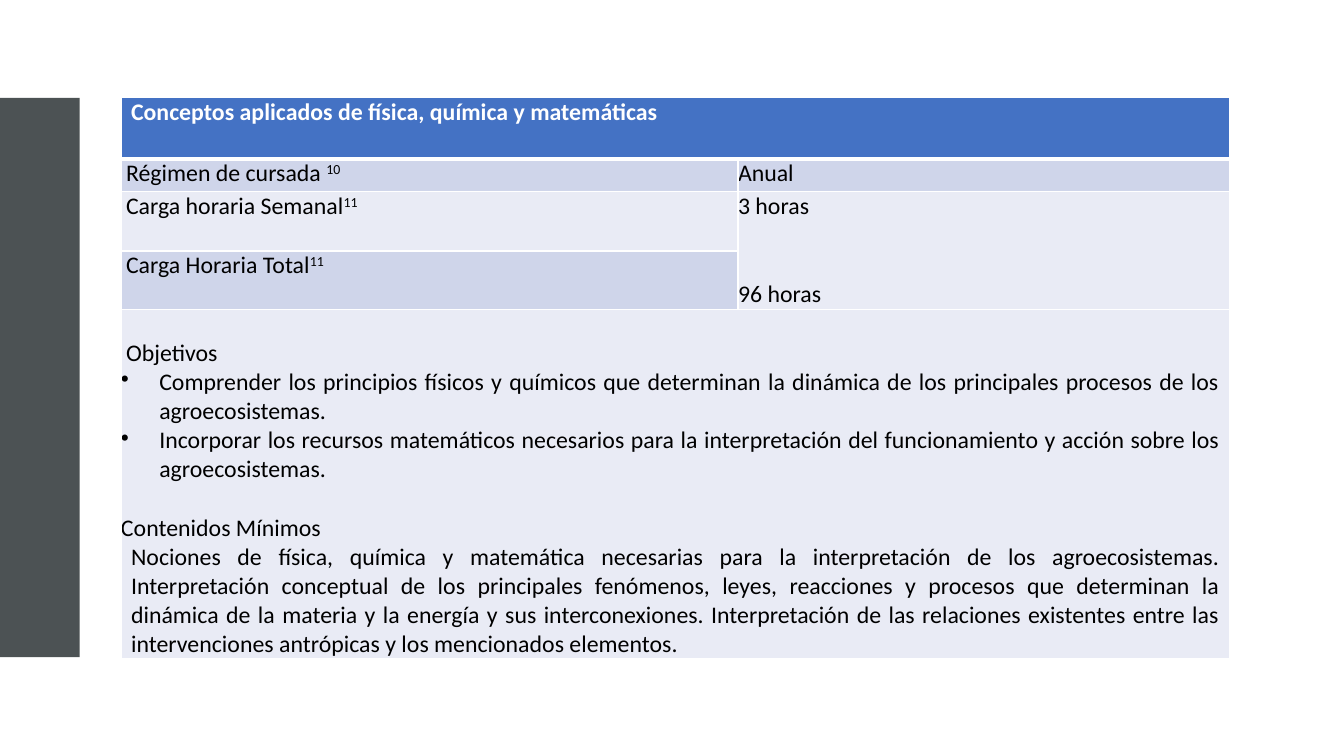
from lxml import etree
from pptx import Presentation
from pptx.dml.color import RGBColor
from pptx.enum.shapes import MSO_SHAPE
from pptx.enum.text import PP_ALIGN
from pptx.oxml.ns import qn
from pptx.util import Inches, Pt

RECT = MSO_SHAPE.RECTANGLE
LEFT = PP_ALIGN.LEFT
JUST = PP_ALIGN.JUSTIFY
HEX = {"bar": "4C5254", "head": "4472C4", "dark": "CFD5EA",
       "pale": "E9EBF5", "white": "FFFFFF", "black": "000000"}
COLS = [6.12, 4.88]
ROWS = [0.61, 0.32, 0.59, 0.58, 3.44]
LINE = 21

GOALS = [
    "Comprender los principios físicos y químicos que determinan la dinámica de los "
    "principales procesos de los agroecosistemas.",
    "Incorporar los recursos matemáticos necesarios para la interpretación del "
    "funcionamiento y acción sobre los agroecosistemas.",
]
TOPICS = (
    "Nociones de física, química y matemática necesarias para la interpretación de los "
    "agroecosistemas. Interpretación conceptual de los principales fenómenos, leyes, "
    "reacciones y procesos que determinan la dinámica de la materia y la energía y sus "
    "interconexiones. Interpretación de las relaciones existentes entre las "
    "intervenciones antrópicas y los mencionados elementos."
)


def color(name):
    return RGBColor.from_string(HEX[name])


def add_bar(slide):
    bar = slide.shapes.add_shape(RECT, 0, Inches(0.97), Inches(0.79), Inches(5.55))
    bar.shadow.inherit = False
    bar.fill.solid()
    bar.fill.fore_color.rgb = color("bar")
    bar.line.fill.background()


def add_edge(cell, side, width):
    props = cell._tc.get_or_add_tcPr()
    edge = etree.SubElement(props, qn("a:ln" + side), w=str(Pt(width)))
    fill = etree.SubElement(edge, qn("a:solidFill"))
    etree.SubElement(fill, qn("a:srgbClr"), val=HEX["white"])


def style_cell(cell, tint, top, base):
    cell.margin_left = cell.margin_right = 0
    cell.margin_top = cell.margin_bottom = 0
    for side, width in (("L", 1), ("R", 1), ("T", top), ("B", base)):
        add_edge(cell, side, width)
    cell.fill.solid()
    cell.fill.fore_color.rgb = color(tint)


def add_grid(slide):
    frame = slide.shapes.add_table(len(ROWS), len(COLS), Inches(1.2), Inches(0.97),
                                   Inches(sum(COLS)), Inches(sum(ROWS)))
    grid = frame.table
    grid.horz_banding = False
    for col, width in zip(grid.columns, COLS):
        col.width = Inches(width)
    for row, height in zip(grid.rows, ROWS):
        row.height = Inches(height)
    tints = [("head", "head"), ("dark", "dark"), ("pale", "pale"),
             ("dark", "pale"), ("pale", "pale")]
    for r, pair in enumerate(tints):
        for c, tint in enumerate(pair):
            style_cell(grid.cell(r, c), tint, 3 if r == 1 else 1, 3 if r == 0 else 1)
    for first, last in (((0, 0), (0, 1)), ((2, 1), (3, 1)), ((4, 0), (4, 1))):
        grid.cell(*first).merge(grid.cell(*last))
    return grid


def write(cell, text, note="", indent=0, gap=0, align=LEFT, ink="black",
          bold=False, bullet=False):
    frame = cell.text_frame
    para = frame.paragraphs[0]
    if para.runs:
        para = frame.add_paragraph()
    para.add_run().text = text
    if note:
        mark = para.add_run()
        mark.text = note
        mark._r.get_or_add_rPr().set("baseline", "30000")
    para.alignment = align
    para.space_before = Pt(gap)
    font = para.font
    font.name, font.size, font.bold = "Calibri", Pt(17), bold
    font.color.rgb = color(ink)
    props = para._p.get_or_add_pPr()
    props.set("marL", str(Inches(indent)))
    props.set("indent", str(Inches(-indent if bullet else 0)))
    if align == JUST:
        props.set("marR", str(Inches(0.1)))
    if bullet:
        dot = etree.Element(qn("a:buChar"), char="•")
        props.find(qn("a:defRPr")).addprevious(dot)


def fill_grid(grid):
    write(grid.cell(0, 0), "Conceptos aplicados de física, química y matemáticas",
          indent=0.1, align=JUST, ink="white", bold=True)
    labels = [("Régimen de cursada ", "10"), ("Carga horaria Semanal", "11"),
              ("Carga Horaria Total", "11")]
    for r, (text, note) in enumerate(labels, 1):
        write(grid.cell(r, 0), text, note, indent=0.05, gap=0.7)
    write(grid.cell(1, 1), "Anual")
    write(grid.cell(2, 1), "3 horas")
    write(grid.cell(2, 1), "96 horas", gap=2 * LINE)
    body = grid.cell(4, 0)
    body.margin_top = Inches(0.29)
    write(body, "Objetivos", indent=0.05)
    for goal in GOALS:
        write(body, goal, indent=0.38, align=JUST, bullet=True)
    write(body, "Contenidos Mínimos", gap=LINE)
    write(body, TOPICS, indent=0.1, align=JUST)


def main():
    deck = Presentation()
    deck.slide_width, deck.slide_height = Inches(13.33), Inches(7.5)
    slide = deck.slides.add_slide(deck.slide_layouts[6])
    add_bar(slide)
    fill_grid(add_grid(slide))
    deck.save("out.pptx")


if __name__ == "__main__":
    main()
